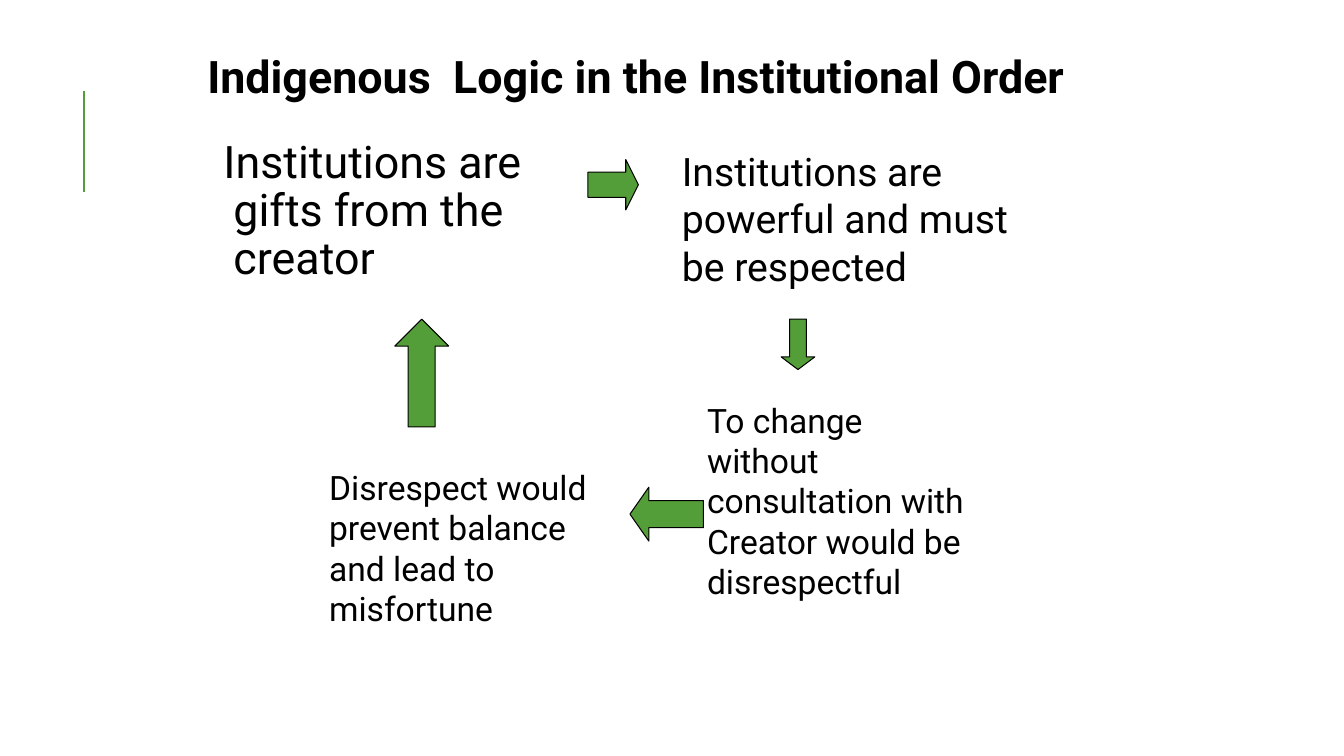
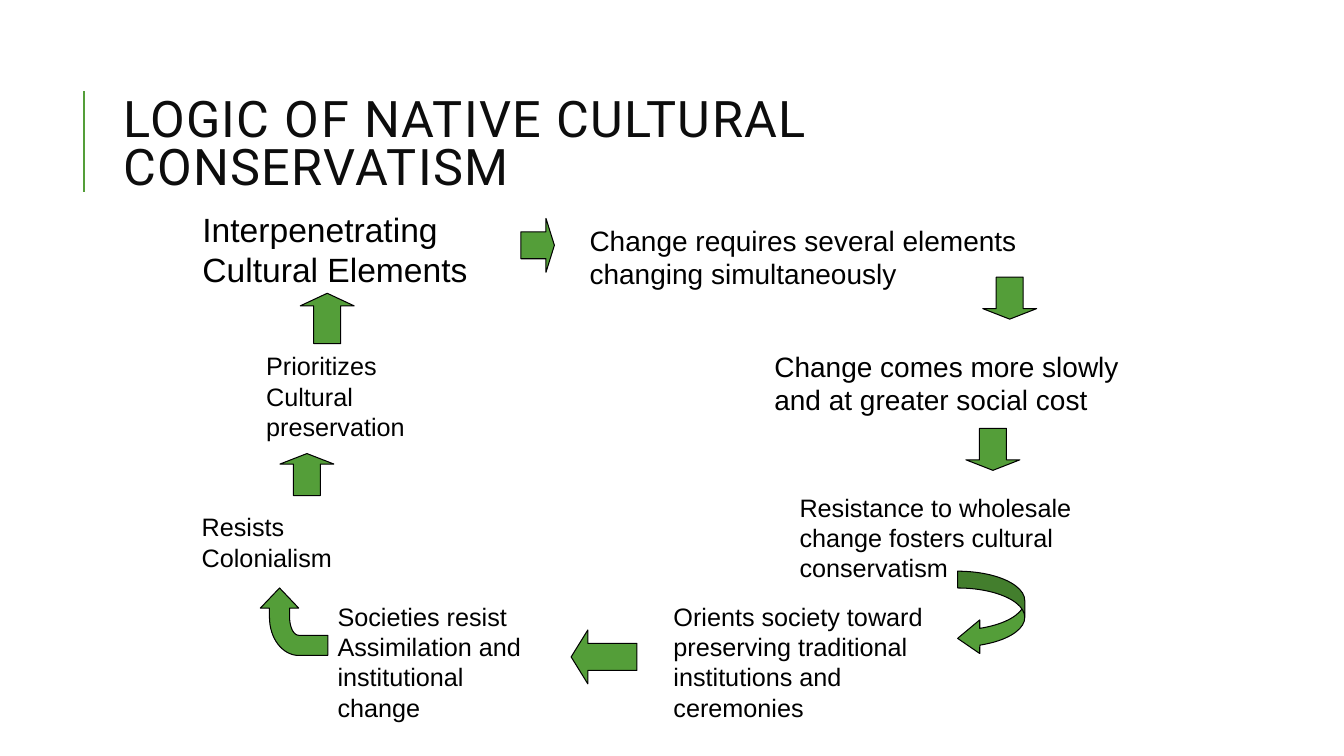
from dataclasses import dataclass

from pptx import Presentation
from pptx.dml.color import RGBColor
from pptx.enum.shapes import MSO_CONNECTOR, MSO_SHAPE
from pptx.enum.text import MSO_ANCHOR
from pptx.oxml.ns import qn
from pptx.shapes.autoshape import Shape
from pptx.slide import Slide
from pptx.util import Pt

RIGHT, LEFT = MSO_SHAPE.RIGHT_ARROW, MSO_SHAPE.LEFT_ARROW
UP, DOWN = MSO_SHAPE.UP_ARROW, MSO_SHAPE.DOWN_ARROW
CURVED_LEFT = MSO_SHAPE.CURVED_LEFT_ARROW
STRAIGHT = MSO_CONNECTOR.STRAIGHT
TOP, MIDDLE = MSO_ANCHOR.TOP, MSO_ANCHOR.MIDDLE

COLORS = {"green": "549E39", "black": "000000", "title": "0D0D0D"}
SANS, ROBOTO = "Arial", "Roboto"

Point = tuple[float, float]


@dataclass(frozen=True)
class Box:
    left: float
    top: float
    width: float
    height: float


@dataclass(frozen=True)
class Step:
    text: str
    box: Box
    size: float


@dataclass(frozen=True)
class Arrow:
    preset: MSO_SHAPE
    box: Box
    adjustments: tuple[float, ...] = (0.5, 0.25)


INSTITUTION_STEPS = [
    Step("Institutions are powerful and must be respected", Box(480, 102, 258, 108), 28),
    Step("To change without consultation with Creator would be disrespectful",
         Box(498, 282, 210, 153), 24),
    Step("Disrespect would prevent balance and lead to misfortune",
         Box(228, 330, 204, 124), 24),
]
INSTITUTION_ARROWS = [
    Arrow(RIGHT, Box(420, 114, 36, 36)),
    Arrow(DOWN, Box(558, 228, 24, 36), (0.5, 0.375)),
    Arrow(LEFT, Box(450, 348, 52.5, 38.5), (0.5, 0.35)),
    Arrow(UP, Box(282, 228, 38.5, 77), (0.5, 0.5)),
]
CONSERVATISM_STEPS = [
    Step("Interpenetrating Cultural Elements", Box(137.5, 145.5, 216, 65.5), 24),
    Step("Change requires several elements changing simultaneously",
         Box(414, 156, 348, 55), 20),
    Step("Change comes more slowly and at greater social cost",
         Box(546, 246, 282, 55), 20),
    Step("Resistance to wholesale change fosters cultural conservatism",
         Box(564, 348, 270, 72), 18),
    Step("Orients society toward preserving traditional institutions and ceremonies",
         Box(474, 426, 199.5, 94), 18),
    Step("Societies resist Assimilation and institutional change",
         Box(234, 426, 162, 94), 18),
    Step("Resists Colonialism", Box(137, 362, 126, 50), 18),
    Step("Prioritizes Cultural preservation", Box(183, 247, 115, 72), 18),
]
CONSERVATISM_ARROWS = [
    Arrow(RIGHT, Box(372, 156, 24, 38.5)),
    Arrow(DOWN, Box(702, 198, 38.5, 30)),
    Arrow(DOWN, Box(690, 306, 38.5, 30)),
    Arrow(CURVED_LEFT, Box(684, 408, 48, 60), (0.25, 0.5, 0.33)),
    Arrow(LEFT, Box(408, 450, 47, 38.5), (0.5, 0.31)),
    Arrow(UP, Box(200, 324, 38.5, 30)),
    Arrow(UP, Box(214.5, 209.5, 38.5, 36)),
]


def color(name: str) -> RGBColor:
    return RGBColor.from_string(COLORS[name])


def place(box: Box) -> tuple[Pt, Pt, Pt, Pt]:
    return Pt(box.left), Pt(box.top), Pt(box.width), Pt(box.height)


def add_text(slide: Slide, text: str, box: Box, *, size: float, font: str = ROBOTO,
             fill: str = "black", bold: bool = False, anchor: MSO_ANCHOR = TOP,
             line_spacing: float = 1.0, inset: float = 7.2, hanging: float = 0,
             tracking: float = 0) -> None:
    frame = slide.shapes.add_textbox(*place(box)).text_frame
    frame.word_wrap = True
    frame.vertical_anchor = anchor
    frame.margin_left = frame.margin_right = Pt(inset)
    paragraph = frame.paragraphs[0]
    paragraph.line_spacing = line_spacing
    if hanging:
        properties = paragraph._p.get_or_add_pPr()
        properties.set("marL", str(Pt(hanging)))
        properties.set("indent", str(-Pt(hanging)))
    run = paragraph.add_run()
    run.text = text
    run.font.name = font
    run.font.size = Pt(size)
    run.font.bold = bold
    run.font.color.rgb = color(fill)
    if tracking:
        run._r.get_or_add_rPr().set("spc", str(round(tracking * 100)))


def style_arrow(shape: Shape) -> None:
    shape.shadow.inherit = False
    shape.fill.solid()
    shape.fill.fore_color.rgb = color("green")
    shape.line.color.rgb = color("black")
    shape.line.width = Pt(0.75)


def add_arrow(slide: Slide, arrow: Arrow) -> None:
    shape = slide.shapes.add_shape(arrow.preset, *place(arrow.box))
    for index, value in enumerate(arrow.adjustments):
        shape.adjustments[index] = value
    style_arrow(shape)


def bezier(start: Point, pull_1: Point, pull_2: Point, end: Point,
           pieces: int = 16) -> list[Point]:
    """Sample a cubic curve, both ends included."""
    points = []
    for piece in range(pieces + 1):
        t = piece / pieces
        weights = ((1 - t) ** 3, 3 * t * (1 - t) ** 2, 3 * t * t * (1 - t), t ** 3)
        controls = (start, pull_1, pull_2, end)
        points.append((sum(w * x for w, (x, _) in zip(weights, controls)),
                       sum(w * y for w, (_, y) in zip(weights, controls))))
    return points


def add_bent_arrow(slide: Slide, left: float, top: float) -> None:
    """Draw an arrow that runs left and then bends upward."""
    outer = bezier((6.5, 20.9), (6.5, 36), (15.8, 48.2), (27.4, 48.2))
    inner = bezier((27.4, 33.8), (23.8, 33.8), (20.9, 28.1), (20.9, 20.9))
    outline = [(13.7, 0), (0, 14.4), (6.5, 14.4), *outer, (48.2, 48.2),
               (48.2, 33.8), *inner, (20.9, 14.4), (27.4, 14.4)]
    corners = [(Pt(left + x), Pt(top + y)) for x, y in outline]
    builder = slide.shapes.build_freeform(*corners[0])
    builder.add_line_segments(corners[1:], close=True)
    style_arrow(builder.convert_to_shape())


def add_cycle_slide(deck: Presentation, steps: list[Step], arrows: list[Arrow],
                    font: str) -> Slide:
    """Add a slide with the side accent, the step texts and their arrows."""
    slide = deck.slides.add_slide(deck.slide_layouts[6])
    accent = slide.shapes.add_connector(STRAIGHT, Pt(60), Pt(137), Pt(60), Pt(65))
    accent.line.color.rgb = color("green")
    accent.line.width = Pt(1.5)
    properties = accent._element.spPr
    properties.append(properties.makeelement(qn("a:effectLst"), {}))
    for step in steps:
        add_text(slide, step.text, step.box, size=step.size, font=font)
    for arrow in arrows:
        add_arrow(slide, arrow)
    return slide


def main() -> None:
    deck = Presentation()
    deck.slide_width, deck.slide_height = Pt(960), Pt(540)

    institutions = add_cycle_slide(deck, INSTITUTION_STEPS, INSTITUTION_ARROWS, ROBOTO)
    add_text(institutions, "Indigenous  Logic in the Institutional Order",
             Box(141, 31, 706, 46), size=32, bold=True)
    add_text(institutions, "Institutions are gifts from the creator",
             Box(156, 96, 288, 90), size=32, line_spacing=0.9, inset=3.6, hanging=7.2)

    conservatism = add_cycle_slide(deck, CONSERVATISM_STEPS, CONSERVATISM_ARROWS, SANS)
    add_text(conservatism, "LOGIC OF NATIVE CULTURAL CONSERVATISM",
             Box(81, 46, 765, 118), size=36, fill="title", anchor=MIDDLE,
             line_spacing=0.8, tracking=1)
    add_bent_arrow(conservatism, 186, 420)

    deck.save("out.pptx")


if __name__ == "__main__":
    main()
